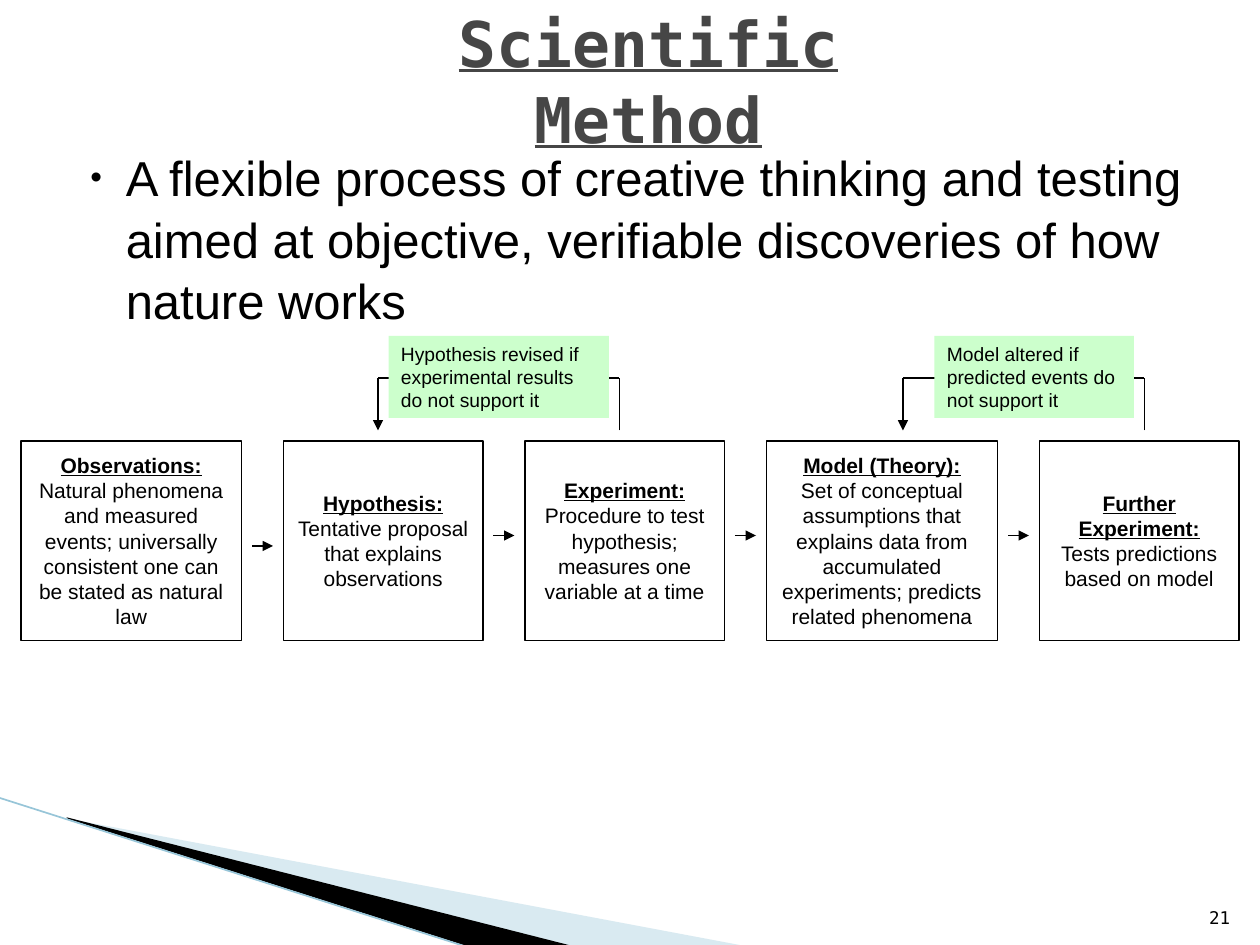
import pptx
import pptx.util
import pptx.dml.color
import pptx.enum.shapes
import pptx.enum.text
import pptx.oxml
import pptx.oxml.ns
from lxml import etree

Pt = pptx.util.Pt
RGB = pptx.dml.color.RGBColor.from_string
ALIGN = pptx.enum.text.PP_ALIGN
ANCHOR = pptx.enum.text.MSO_ANCHOR
RECTANGLE = pptx.enum.shapes.MSO_SHAPE.RECTANGLE
STRAIGHT = pptx.enum.shapes.MSO_CONNECTOR.STRAIGHT
qn = pptx.oxml.ns.qn

COLORS = {"black": "000000", "white": "FFFFFF", "title": "464646",
          "note": "CCFFCC", "pale": "A0CBDC", "edge": "97C5D8"}


def write(box, lines, anchor=ANCHOR.TOP, align=ALIGN.LEFT, color="black"):
    frame = box.text_frame
    frame.word_wrap = True
    frame.vertical_anchor = anchor
    for index, (text, formats) in enumerate(lines):
        para = frame.paragraphs[0] if index == 0 else frame.add_paragraph()
        para.alignment = align
        span = para.add_run()
        span.text = text
        for name, value in formats.items():
            setattr(span.font, name, value)
        span.font.color.rgb = RGB(COLORS[color])
    return frame


def draw_line(start, end, arrow=False, color="black", width=0.75):
    line = slide.shapes.add_connector(STRAIGHT, *map(Pt, start + end))
    line.line.color.rgb = RGB(COLORS[color])
    line.line.width = Pt(width)
    properties = line._element.spPr
    if arrow:
        etree.SubElement(properties.find(qn("a:ln")), qn("a:tailEnd"), type="triangle")
    etree.SubElement(properties, qn("a:effectLst"))


deck = pptx.Presentation()
deck.slide_width, deck.slide_height = Pt(720), Pt(540)
slide = deck.slides.add_slide(deck.slide_layouts[6])

wedges = [
    ("pale", 40, [(39.6, 468.4), (428.4, 540.7), (328.3, 540.7), (39.6, 468)]),
    ("black", 100, [(38.2, 467.3), (329, 540.7), (267.8, 541.4), (38.9, 468)]),
]
for color, opacity, points in wedges:
    builder = slide.shapes.build_freeform(*points[0], scale=Pt(1))
    builder.add_line_segments(points[1:], close=True)
    wedge = builder.convert_to_shape()
    wedge.shadow.inherit = False
    wedge.fill.solid()
    wedge.fill.fore_color.rgb = RGB(COLORS[color])
    wedge.line.fill.background()
    if opacity < 100:
        fill_color = wedge._element.spPr.find(qn("a:solidFill"))[0]
        etree.SubElement(fill_color, qn("a:alpha"), val=str(opacity * 1000))
draw_line((-0.7, 455.8), (267.8, 541.4), color="edge", width=0.95)

body = slide.shapes.add_textbox(Pt(36), Pt(79), Pt(648), Pt(148))
frame = write(body, [("A flexible process of creative thinking and testing aimed at objective, "
                      "verifiable discoveries of how nature works",
                      {"name": "Arial", "size": Pt(28)})])
para = frame.paragraphs[0]
para.line_spacing = 1.05
bullet = para._p.get_or_add_pPr()
bullet.set("marL", str(Pt(28.8)))
bullet.set("indent", str(Pt(-20.2)))
etree.SubElement(bullet, qn("a:buSzPct"), val="68000")
etree.SubElement(bullet, qn("a:buFont"), typeface="Arial")
etree.SubElement(bullet, qn("a:buChar"), char="•")

title = slide.shapes.add_textbox(Pt(204), Pt(18), Pt(333), Pt(56))
write(title, [("Scientific Method", {"name": "DejaVu Sans Mono", "size": Pt(36),
                                     "bold": True, "underline": True})],
      ANCHOR.MIDDLE, ALIGN.CENTER, "title")

steps = [
    ("Observations:", "Natural phenomena and measured events; universally consistent one "
     "can be stated as natural law", 126, 312),
    ("Hypothesis:", "Tentative proposal that explains observations", 114, 306),
    ("Experiment:", "Procedure to test hypothesis; measures one variable at a time", 114, 306),
    ("Model (Theory):", "Set of conceptual assumptions that explains data from accumulated "
     "experiments; predicts related phenomena", 132, 306),
    ("Further Experiment:", "Tests predictions based on model", 114, None),
]
plain = {"name": "Arial", "size": Pt(12)}
heading = {**plain, "bold": True, "underline": True}
left = 12
for name, text, width, arrow_y in steps:
    step = slide.shapes.add_shape(RECTANGLE, Pt(left), Pt(252), Pt(width), Pt(114))
    step.shadow.inherit = False
    step.fill.solid()
    step.fill.fore_color.rgb = RGB(COLORS["white"])
    step.line.color.rgb = RGB(COLORS["black"])
    step.line.width = Pt(0.75)
    write(step, [(name, heading), (text, plain)], ANCHOR.MIDDLE, ALIGN.CENTER)
    right = left + width
    if arrow_y:
        draw_line((right + 6, arrow_y), (right + 18, arrow_y), arrow=True)
    left = right + 24

feedback = [
    ("Hypothesis revised if experimental results do not support it", 216, 222, 126),
    ("Model altered if predicted events do not support it", 516, 534, 114),
]
for text, target, note_left, note_width in feedback:
    source = target + 138
    draw_line((source, 246), (source, 216))
    draw_line((target, 216), (target, 246), arrow=True)
    draw_line((target, 216), (source, 216))
    note = slide.shapes.add_shape(RECTANGLE, Pt(note_left), Pt(192), Pt(note_width), Pt(46.8))
    note.shadow.inherit = False
    note.fill.solid()
    note.fill.fore_color.rgb = RGB(COLORS["note"])
    note.line.fill.background()
    write(note, [(text, {"name": "Arial", "size": Pt(11)})])

number = slide.shapes.add_textbox(Pt(681), Pt(505), Pt(29), Pt(29))
write(number, [("21", {"name": "DejaVu Sans Mono", "size": Pt(10)})],
      ANCHOR.BOTTOM, ALIGN.RIGHT)

deck.save("out.pptx")
